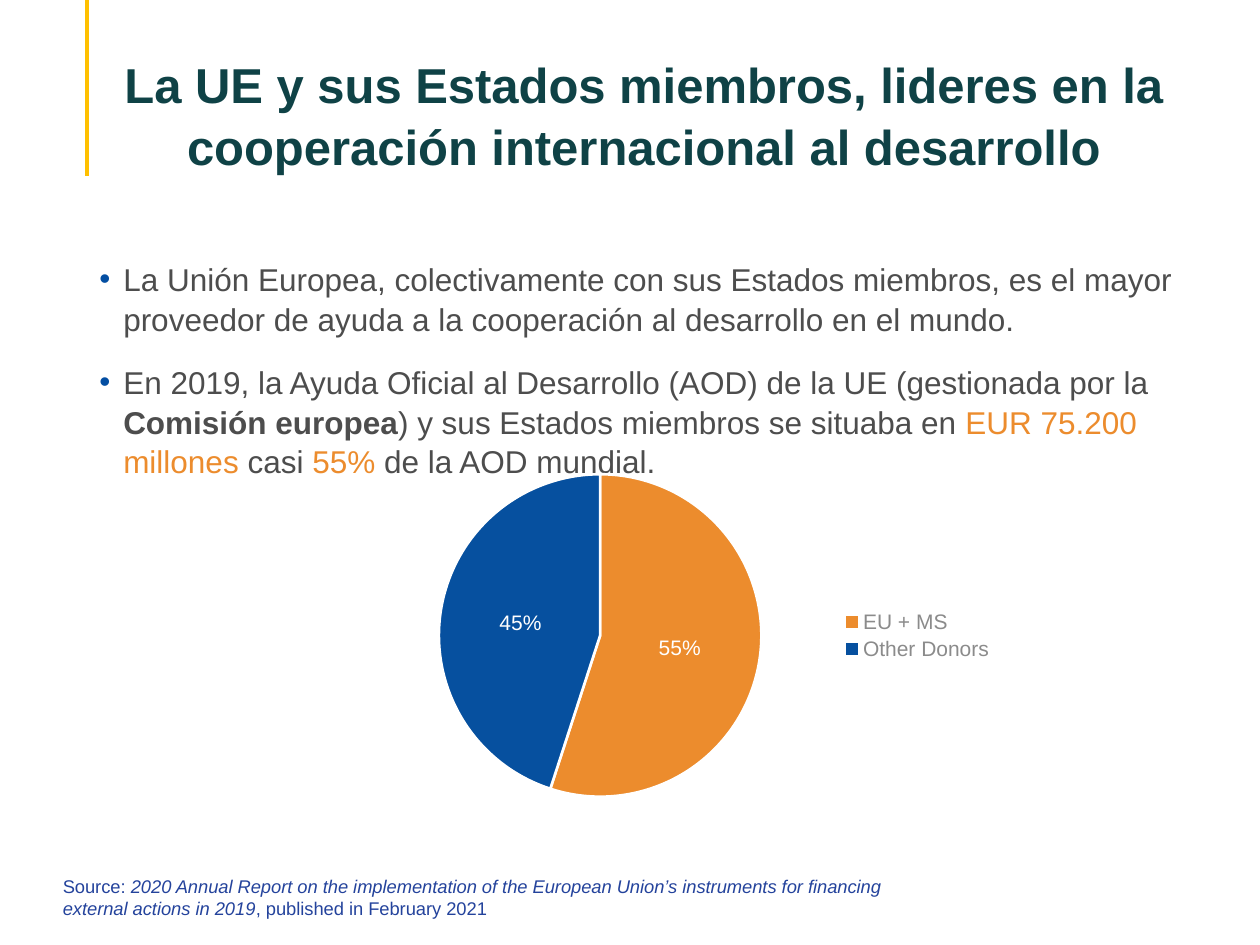
from typing import NamedTuple, Optional

from lxml import etree
from pptx import Presentation
from pptx.chart.data import CategoryChartData
from pptx.dml.color import RGBColor
from pptx.enum.chart import XL_CHART_TYPE, XL_LABEL_POSITION, XL_LEGEND_POSITION
from pptx.enum.shapes import MSO_CONNECTOR
from pptx.enum.text import MSO_ANCHOR, MSO_AUTO_SIZE, PP_ALIGN
from pptx.oxml import parse_xml
from pptx.oxml.ns import nsdecls, qn
from pptx.util import Pt

PIE = XL_CHART_TYPE.PIE
LABEL_CENTER = XL_LABEL_POSITION.CENTER
LEGEND_RIGHT = XL_LEGEND_POSITION.RIGHT
STRAIGHT = MSO_CONNECTOR.STRAIGHT
BOTTOM = MSO_ANCHOR.BOTTOM
NO_AUTOFIT = MSO_AUTO_SIZE.NONE
CENTER = PP_ALIGN.CENTER

FONT = "Arial"
WHITE = RGBColor(0xFF, 0xFF, 0xFF)
YELLOW = RGBColor(0xFF, 0xC0, 0x00)
TEAL = RGBColor(0x0F, 0x42, 0x46)
GRAY = RGBColor(0x4D, 0x4D, 0x4D)
LEGEND_GRAY = RGBColor(0x8B, 0x8B, 0x8B)
ORANGE = RGBColor(0xEC, 0x8C, 0x2D)
PIE_BLUE = RGBColor(0x06, 0x50, 0x9F)
BULLET_BLUE = RGBColor(0x03, 0x4E, 0xA2)
SOURCE_BLUE = RGBColor(0x24, 0x43, 0x9C)

LINE_SPACING = 1.05


class Area(NamedTuple):
    left: float
    top: float
    width: float
    height: float

    def lengths(self) -> list:
        return [Pt(value) for value in self]


class Span(NamedTuple):
    text: str
    color: Optional[RGBColor] = None
    bold: bool = False
    italic: bool = False


class Slice(NamedTuple):
    name: str
    value: int
    color: RGBColor


TITLE = "La UE y sus Estados miembros, lideres en la cooperación internacional al desarrollo"
BULLETS = [
    [Span("La Unión Europea, colectivamente con sus Estados miembros, es el mayor "
          "proveedor de ayuda a la cooperación al desarrollo en el mundo.")],
    [Span("En 2019, la Ayuda Oficial al Desarrollo (AOD) de la UE (gestionada por la "),
     Span("Comisión europea", bold=True),
     Span(") y sus Estados miembros se situaba en "),
     Span("EUR 75.200 millones ", ORANGE),
     Span("casi "),
     Span("55%", ORANGE),
     Span(" de la AOD mundial.")],
]
SOURCE = [
    Span("Source: "),
    Span("2020 Annual Report on the implementation of the European Union’s instruments "
         "for financing external actions in 2019", italic=True),
    Span(", published in February 2021"),
]
SLICES = [Slice("EU + MS", 55, ORANGE), Slice("Other Donors", 45, PIE_BLUE)]


def set_font(font, size: float, color: RGBColor, **extra) -> None:
    for name, value in {"name": FONT, "size": Pt(size), **extra}.items():
        setattr(font, name, value)
    font.color.rgb = color


def write_spans(para, spans: list, size: float, color: RGBColor) -> None:
    for span in spans:
        run = para.add_run()
        run.text = span.text
        set_font(run.font, size, span.color or color, bold=span.bold, italic=span.italic)


def add_bullet(para, indent: float) -> None:
    properties = para._p.get_or_add_pPr()
    properties.set("marL", str(Pt(indent)))
    properties.set("indent", str(-Pt(indent)))
    color = etree.SubElement(properties, qn("a:buClr"))
    etree.SubElement(color, qn("a:srgbClr"), val=str(BULLET_BLUE))
    etree.SubElement(properties, qn("a:buFont"), typeface=FONT)
    etree.SubElement(properties, qn("a:buChar"), char="•")


def add_text(page, area: Area, paragraphs: list, size: float, color: RGBColor):
    box = page.shapes.add_textbox(*area.lengths())
    frame = box.text_frame
    frame.word_wrap = True
    for index, spans in enumerate(paragraphs):
        para = frame.paragraphs[0] if index == 0 else frame.add_paragraph()
        write_spans(para, spans, size, color)
    return frame


def add_title(page) -> None:
    title = page.shapes.title
    title.left, title.top, title.width, title.height = Area(57.6, 38.2, 620.6, 61.9).lengths()
    frame = title.text_frame
    layout = {"vertical_anchor": BOTTOM, "auto_size": NO_AUTOFIT, "word_wrap": True,
              "margin_bottom": Pt(0)}
    for name, value in layout.items():
        setattr(frame, name, value)
    para = frame.paragraphs[0]
    para.alignment = CENTER
    para.line_spacing = LINE_SPACING
    write_spans(para, [Span(TITLE, bold=True)], 28, TEAL)


def add_accent_line(page) -> None:
    line = page.shapes.add_connector(STRAIGHT, Pt(49.7), Pt(0), Pt(49.7), Pt(100.8))
    line.line.color.rgb = YELLOW
    line.line.width = Pt(2.25)
    etree.SubElement(line._element.spPr, qn("a:effectLst"))


def set_plot_layout(chart, x: float, y: float, w: float, h: float) -> None:
    plot_area = chart._chartSpace.chart.plotArea
    for old in plot_area.findall(qn("c:layout")):
        plot_area.remove(old)
    sizes = "".join(f'<c:{tag} val="{value}"/>' for tag, value in
                    {"x": x, "y": y, "w": w, "h": h}.items())
    plot_area.insert(0, parse_xml(
        f'<c:layout {nsdecls("c")}><c:manualLayout><c:layoutTarget val="inner"/>'
        f'<c:xMode val="edge"/><c:yMode val="edge"/>{sizes}</c:manualLayout></c:layout>'))


def add_pie(page, area: Area, slices: list) -> None:
    data = CategoryChartData()
    data.categories = [part.name for part in slices]
    data.add_series("Series 1", [part.value for part in slices])
    chart = page.shapes.add_chart(PIE, *area.lengths(), data).chart
    set_font(chart.font, 10, GRAY)
    chart.has_title = False
    set_plot_layout(chart, 0.12, 0.05, 0.5, 0.9)

    # Legend
    chart.has_legend = True
    chart.legend.position = LEGEND_RIGHT
    chart.legend.include_in_layout = False
    set_font(chart.legend.font, 12, LEGEND_GRAY)

    # Slices and percentage labels
    plot = chart.plots[0]
    plot.vary_by_categories = True
    for index, part in enumerate(slices):
        style = plot.series[0].points[index].format
        style.fill.solid()
        style.fill.fore_color.rgb = part.color
        style.line.color.rgb = WHITE
        style.line.width = Pt(1.5)
    plot.has_data_labels = True
    labels = plot.data_labels
    formats = {"show_percentage": True, "show_value": False, "number_format": "0%",
               "number_format_is_linked": False, "position": LABEL_CENTER}
    for name, value in formats.items():
        setattr(labels, name, value)
    set_font(labels.font, 12, WHITE)


def main() -> None:
    deck = Presentation()
    deck.slide_width, deck.slide_height = Pt(720), Pt(540)
    page = deck.slides.add_slide(deck.slide_layouts[5])

    # Heading
    add_accent_line(page)
    add_title(page)

    # Bulleted body
    body = add_text(page, Area(49.7, 144, 643.7, 108), BULLETS, 18, GRAY)
    for para in body.paragraphs:
        para.line_spacing = LINE_SPACING
        para.space_after = Pt(13.5)
        add_bullet(para, 13.7)

    # Chart and its source
    add_pie(page, Area(206.6, 260.6, 368.6, 205.2), SLICES)
    add_text(page, Area(28.8, 496.8, 497.5, 32.4), [SOURCE], 10.5, SOURCE_BLUE)

    deck.save("out.pptx")


if __name__ == "__main__":
    main()
